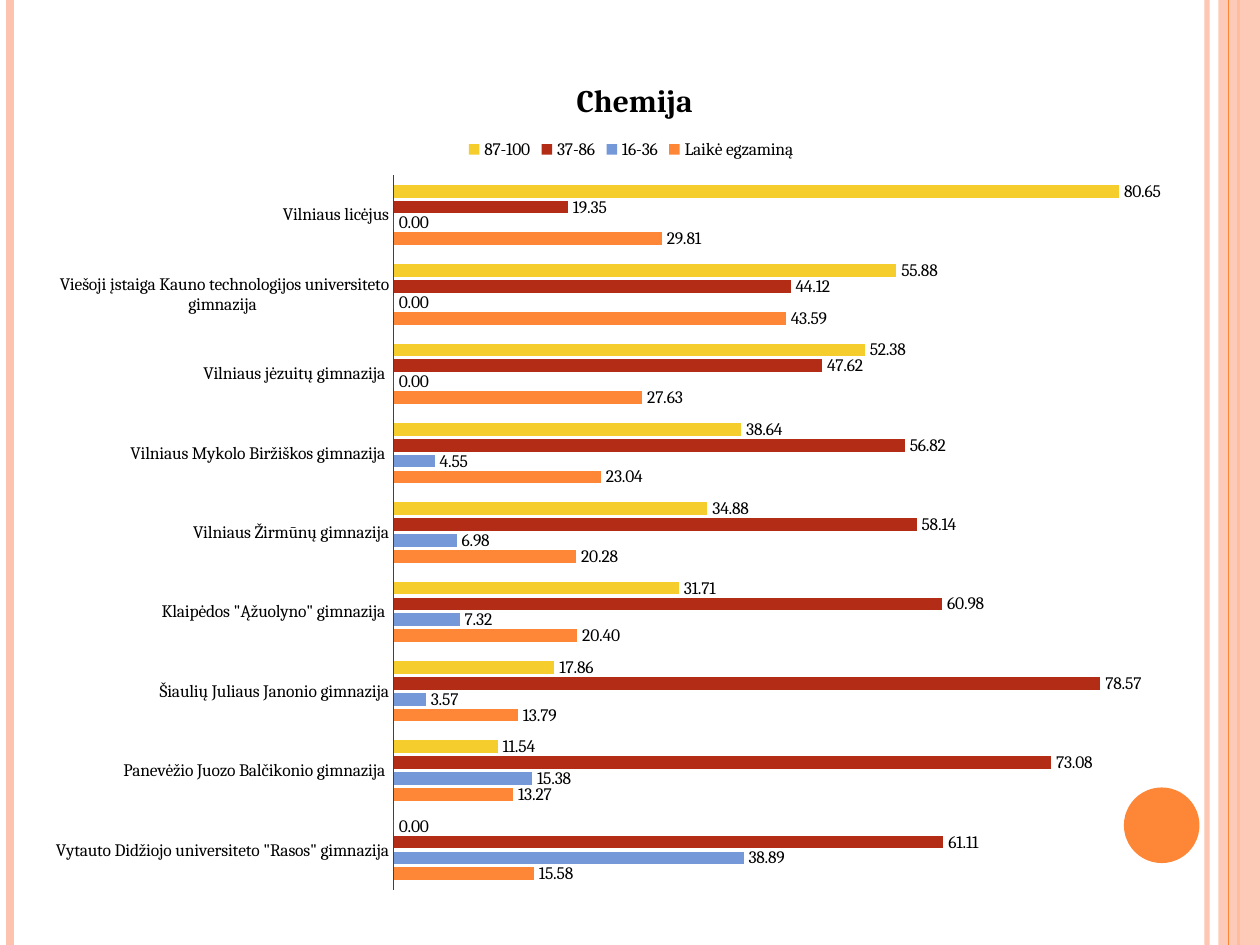
from lxml.etree import SubElement
from pptx import Presentation
from pptx.chart.data import CategoryChartData as ChartData
from pptx.dml.color import RGBColor
from pptx.enum.chart import XL_CHART_TYPE as ChartType
from pptx.enum.chart import XL_LABEL_POSITION as LabelPosition
from pptx.enum.chart import XL_LEGEND_POSITION as LegendPosition
from pptx.enum.chart import XL_TICK_MARK as TickMark
from pptx.enum.shapes import MSO_CONNECTOR as Connector
from pptx.enum.shapes import MSO_SHAPE as Shape
from pptx.oxml import parse_xml
from pptx.oxml.ns import nsdecls, qn
from pptx.util import Inches, Pt


def paint(fill, color):
    fill.solid()
    fill.fore_color.rgb = RGBColor.from_string(color)


def write(frame, text, size=10, color="000000", bold=False, face="Cambria"):
    frame.text = text
    font = frame.paragraphs[0].runs[0].font
    font.size, font.bold, font.name = Pt(size), bold, face
    paint(font.fill, color)


ORANGE, PEACH = "FE8637", "FEC3AE"

deck = Presentation()
deck.slide_width, deck.slide_height = Inches(10), Inches(7.5)
slide = deck.slides.add_slide(deck.slide_layouts[6])
shapes = slide.shapes
bottom = deck.slide_height

stripes = [
    (9.58, 3, PEACH, 93),
    (0.08, 4.5, PEACH, 100),
    (9.83, 1.5, ORANGE, 100),
    (9.67, None, PEACH, 87),
    (9.75, 0.75, ORANGE, 100),
]
for x, weight, color, opacity in stripes:
    left = Inches(x)
    if weight is None:
        stripe = shapes.add_shape(Shape.RECTANGLE, left, 0, deck.slide_width - left, bottom)
        stripe.shadow.inherit = False
        stripe.line.fill.background()
        paint(stripe.fill, color)
    else:
        stripe = shapes.add_connector(Connector.STRAIGHT, left, 0, left, bottom)
        stripe.line.width = Pt(weight)
        paint(stripe.line.fill, color)
        SubElement(stripe._element.spPr, qn("a:effectLst"))
    if opacity < 100:
        tint = stripe._element.xpath(".//a:srgbClr")[0]
        SubElement(tint, qn("a:alpha"), val=str(opacity * 1000))

dot = shapes.add_shape(Shape.OVAL, Inches(8.92), Inches(6.25), Inches(0.6), Inches(0.6))
dot.shadow.inherit = False
dot.line.fill.background()
paint(dot.fill, ORANGE)

schools = [
    'Vytauto Didžiojo universiteto "Rasos" gimnazija',
    "Panevėžio Juozo Balčikonio gimnazija ",
    " Šiaulių Juliaus Janonio gimnazija",
    ' Klaipėdos "Ąžuolyno" gimnazija ',
    "Vilniaus Žirmūnų gimnazija",
    "Vilniaus Mykolo Biržiškos gimnazija ",
    " Vilniaus jėzuitų gimnazija ",
    "Viešoji įstaiga Kauno technologijos universiteto gimnazija ",
    "Vilniaus licėjus",
]
results = [
    ("Laikė egzaminą", ORANGE, [15.58, 13.27, 13.79, 20.4, 20.28, 23.04, 27.63, 43.59, 29.81]),
    ("16-36", "7598D9", [38.89, 15.38, 3.57, 7.32, 6.98, 4.55, 0, 0, 0]),
    ("37-86", "B32C16", [61.11, 73.08, 78.57, 60.98, 58.14, 56.82, 47.62, 44.12, 19.35]),
    ("87-100", "F5CD2D", [0, 11.54, 17.86, 31.71, 34.88, 38.64, 52.38, 55.88, 80.65]),
]
scores = ChartData(number_format="0.00")
scores.categories = schools
for name, color, values in results:
    scores.add_series(name, values)

chart = shapes.add_chart(
    ChartType.BAR_CLUSTERED, Inches(0.26), Inches(0.31), Inches(9.49), Inches(6.89), scores
).chart
chart.font.size, chart.font.name = Pt(10), "Cambria"
paint(chart.font.fill, "000000")
chart.has_title = True
write(chart.chart_title.text_frame, "Chemija", size=18, bold=True)
chart.has_legend = True
chart.legend.position = LegendPosition.TOP
chart.legend.include_in_layout = False

school_axis, score_axis = chart.category_axis, chart.value_axis
school_axis.major_tick_mark = school_axis.minor_tick_mark = TickMark.NONE
school_axis.format.line.width = Pt(0.75)
paint(school_axis.format.line.fill, "404040")
score_axis.minimum_scale, score_axis.maximum_scale = 0, 90
score_axis.has_major_gridlines = False
score_axis.visible = False

plot = chart.plots[0]
plot.gap_width, plot.overlap = 150, -25
plot.vary_by_categories = False
for series, (name, color, values) in zip(plot.series, results):
    paint(series.format.fill, color)
    series.invert_if_negative = False
    labels = series.data_labels
    labels.show_value = True
    labels.number_format, labels.number_format_is_linked = "0.00", False
    labels.position = LabelPosition.OUTSIDE_END

placements = [
    ("c:title", 1, {"x": 0.45, "y": 0.04}),
    ("c:legend", 1, {"x": 0.36, "y": 0.11}),
    ("c:plotArea", 0, {"x": 0.302, "y": 0.157, "w": 0.677, "h": 0.823}),
]
for tag, index, shares in placements:
    part = chart._chartSpace.chart.find(qn(tag))
    for previous in part.findall(qn("c:layout")):
        part.remove(previous)
    layout = parse_xml(f"<c:layout {nsdecls('c')}><c:manualLayout/></c:layout>")
    if tag == "c:plotArea":
        SubElement(layout[0], qn("c:layoutTarget"), val="inner")
    for side in "xy":
        SubElement(layout[0], qn(f"c:{side}Mode"), val="edge")
    for side, share in shares.items():
        SubElement(layout[0], qn(f"c:{side}"), val=str(share))
    part.insert(index, layout)

deck.save("out.pptx")
